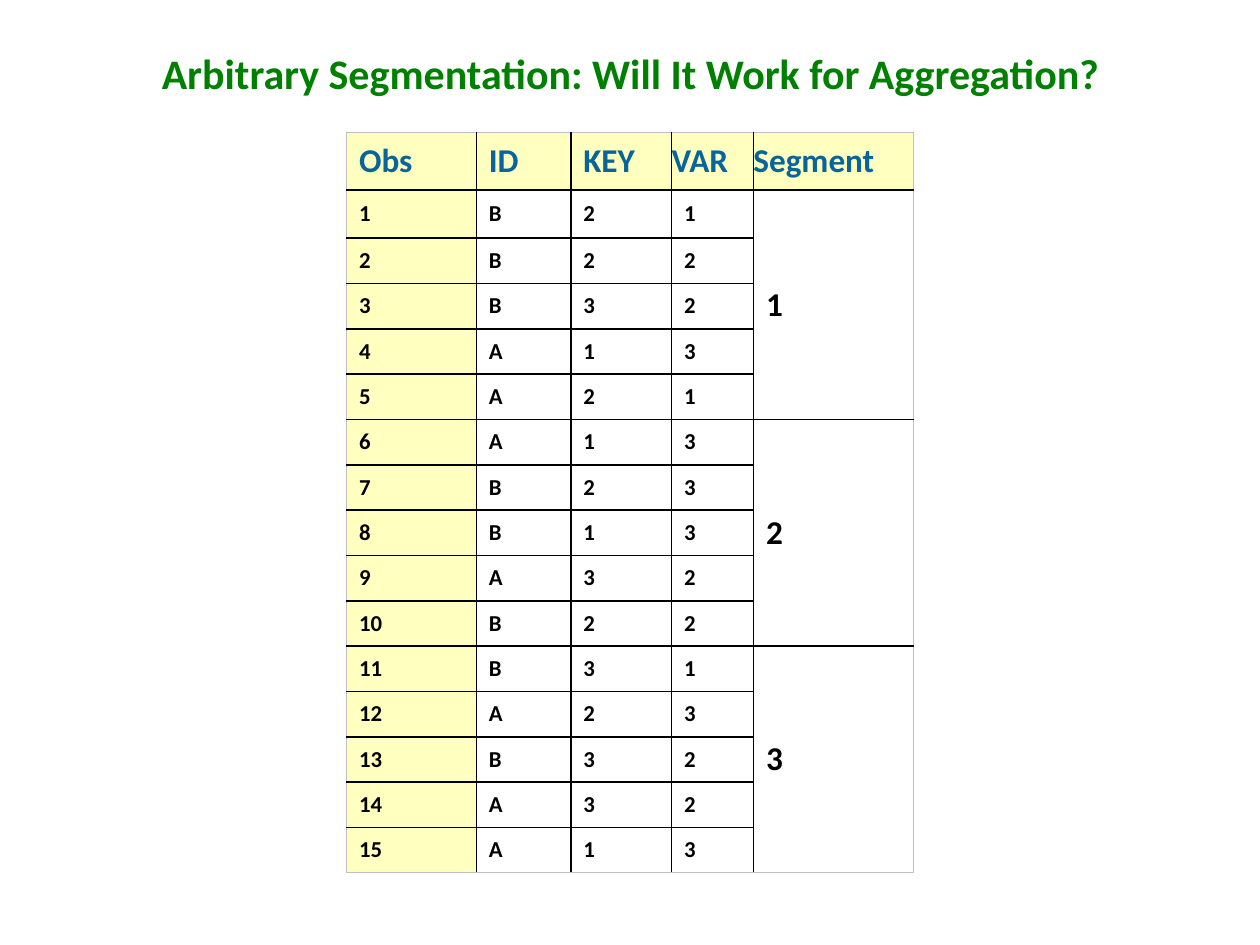
from dataclasses import dataclass

from lxml import etree
from pptx import Presentation
from pptx.dml.color import RGBColor
from pptx.enum.text import MSO_ANCHOR, PP_ALIGN
from pptx.oxml.ns import qn
from pptx.table import Table, _Cell
from pptx.text.text import TextFrame
from pptx.util import Inches, Pt

MIDDLE = MSO_ANCHOR.MIDDLE
CENTER = PP_ALIGN.CENTER
GREEN = RGBColor(0x00, 0x80, 0x00)
BLUE = RGBColor(0x08, 0x64, 0x9C)
BLACK = RGBColor(0x00, 0x00, 0x00)
YELLOW = RGBColor(0xFF, 0xFF, 0x00)
GREY = RGBColor(0xC0, 0xC0, 0xC0)

SLIDE_WIDTH, SLIDE_HEIGHT = Inches(10), Inches(7.5)
COLUMN_WIDTHS = (1.03, 0.75, 0.8, 0.65, 1.27)
ROW_HEIGHTS = (0.46, 0.38) + (0.36,) * 14
HEADERS = ("Obs", "ID", "KEY", "VAR", "Segment")
IDS = "BBBAAABBABBABAA"
KEYS = "223121213232331"
VARS = "122313332213223"
SEGMENT_ROWS = 5
SEGMENT_COLUMN = len(HEADERS) - 1
LAST_ROW = len(IDS)
CELL_MARGINS = (0.1, 0.07)
TIGHT_MARGINS = (0, 0)


@dataclass(frozen=True)
class TextStyle:
    size: float
    color: RGBColor


TITLE_STYLE = TextStyle(24, GREEN)
HEADER_STYLE = TextStyle(19, BLUE)
VALUE_STYLE = TextStyle(13, BLACK)
SEGMENT_STYLE = TextStyle(19, BLACK)


def write_text(frame: TextFrame, text: str, style: TextStyle) -> None:
    frame.text = text
    font = frame.paragraphs[0].runs[0].font
    font.color.rgb = style.color
    formats = {"name": "Calibri", "size": Pt(style.size), "bold": True}
    for name, value in formats.items():
        setattr(font, name, value)


def fill_cell(cell: _Cell, highlighted: bool) -> None:
    if not highlighted:
        cell.fill.background()
        return
    cell.fill.solid()
    cell.fill.fore_color.rgb = YELLOW
    color = next(cell._tc.tcPr.iter(qn("a:srgbClr")))
    etree.SubElement(color, qn("a:alpha"), val="25000")


def draw_borders(cell: _Cell, row: int, column: int, bottom_row: int) -> None:
    outer_edges = {
        "a:lnL": column == 0,
        "a:lnR": column == SEGMENT_COLUMN,
        "a:lnT": row == 0,
        "a:lnB": bottom_row == LAST_ROW,
    }
    for index, (tag, outer) in enumerate(outer_edges.items()):
        line = etree.Element(qn(tag), w=str(Pt(0.5 if outer else 1)))
        fill = etree.SubElement(line, qn("a:solidFill"))
        etree.SubElement(fill, qn("a:srgbClr"), val=str(GREY if outer else BLACK))
        cell._tc.get_or_add_tcPr().insert(index, line)


def write_cell(table: Table, row: int, column: int, text: str, style: TextStyle,
               row_span: int = 1) -> None:
    cell = table.cell(row, column)
    bottom_row = row + row_span - 1
    if row_span > 1:
        cell.merge(table.cell(bottom_row, column))
    write_text(cell.text_frame, text, style)
    tight = row == 0 and column >= SEGMENT_COLUMN - 1
    side, end = TIGHT_MARGINS if tight else CELL_MARGINS
    formats = {
        "vertical_anchor": MIDDLE,
        "margin_left": Inches(side),
        "margin_right": Inches(side),
        "margin_top": Inches(end),
        "margin_bottom": Inches(end),
    }
    for name, value in formats.items():
        setattr(cell, name, value)
    fill_cell(cell, highlighted=row == 0 or column == 0)
    draw_borders(cell, row, column, bottom_row)


def add_observations(slide) -> None:
    width, height = Inches(sum(COLUMN_WIDTHS)), Inches(sum(ROW_HEIGHTS))
    table = slide.shapes.add_table(
        len(ROW_HEIGHTS), len(COLUMN_WIDTHS),
        (SLIDE_WIDTH - width) // 2, int(SLIDE_HEIGHT * 0.14), width, height,
    ).table
    table.first_row = table.horz_banding = False
    for column, column_width in zip(table.columns, COLUMN_WIDTHS):
        column.width = Inches(column_width)
    for row, row_height in zip(table.rows, ROW_HEIGHTS):
        row.height = Inches(row_height)

    for column, header in enumerate(HEADERS):
        write_cell(table, 0, column, header, HEADER_STYLE)
    for row, values in enumerate(zip(IDS, KEYS, VARS), start=1):
        for column, value in enumerate((str(row), *values)):
            write_cell(table, row, column, value, VALUE_STYLE)
    for segment, row in enumerate(range(1, LAST_ROW + 1, SEGMENT_ROWS), start=1):
        write_cell(table, row, SEGMENT_COLUMN, str(segment), SEGMENT_STYLE, SEGMENT_ROWS)


def add_title(slide, text: str) -> None:
    title = slide.shapes.title
    formats = {"left": 0.69, "top": 0.28, "width": 8.63, "height": 0.59}
    for name, value in formats.items():
        setattr(title, name, Inches(value))
    write_text(title.text_frame, text, TITLE_STYLE)
    title.text_frame.vertical_anchor = MIDDLE
    title.text_frame.paragraphs[0].alignment = CENTER


def main() -> None:
    presentation = Presentation()
    presentation.slide_width = SLIDE_WIDTH
    presentation.slide_height = SLIDE_HEIGHT
    slide = presentation.slides.add_slide(presentation.slide_layouts.get_by_name("Title Only"))
    add_title(slide, "Arbitrary Segmentation: Will It Work for Aggregation?")
    add_observations(slide)
    presentation.save("out.pptx")


if __name__ == "__main__":
    main()
